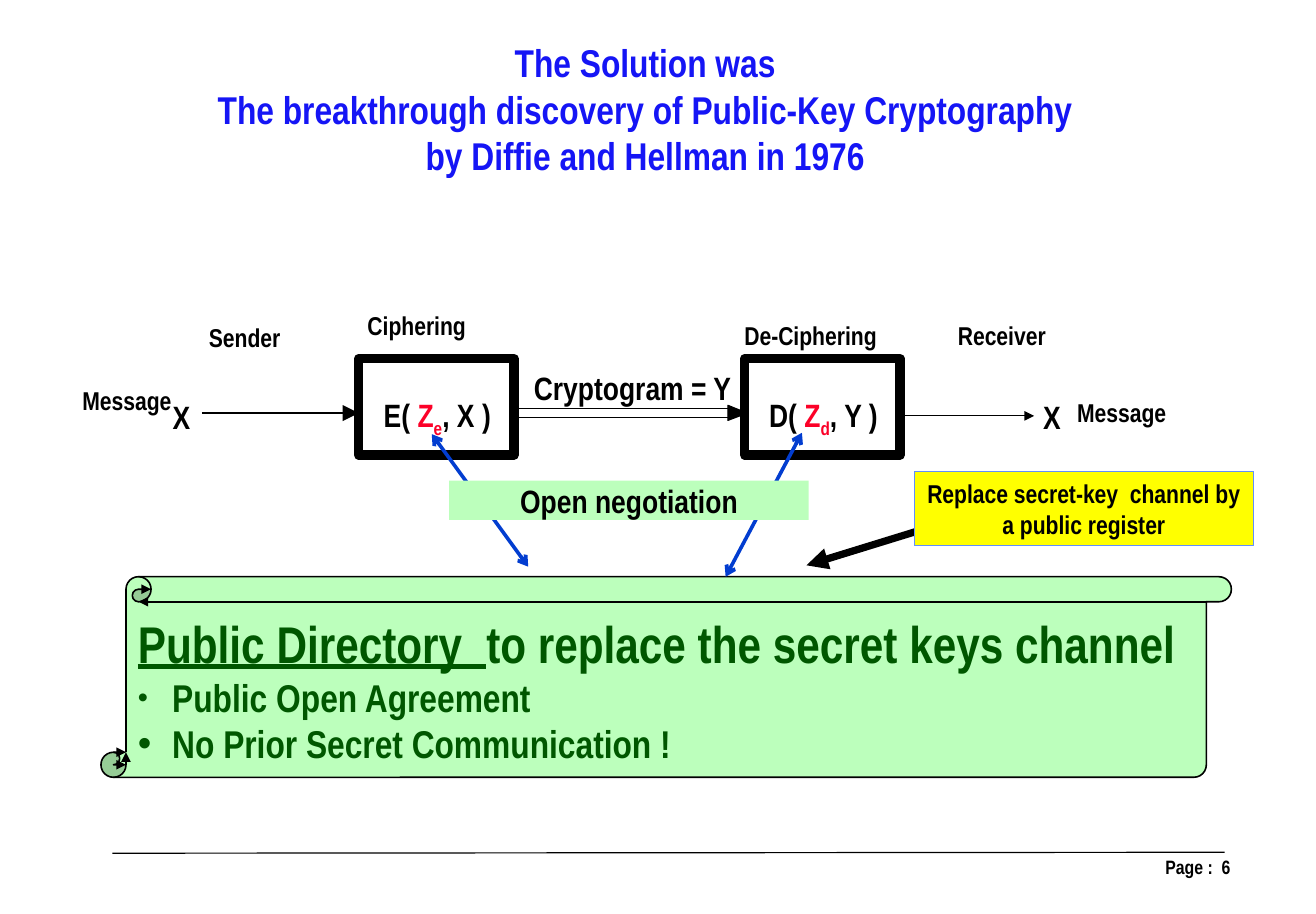
from lxml import etree
from pptx import Presentation
from pptx.dml.color import RGBColor
from pptx.enum.shapes import MSO_CONNECTOR, MSO_SHAPE
from pptx.enum.text import MSO_ANCHOR, PP_ALIGN
from pptx.oxml.ns import qn
from pptx.util import Cm, Pt

RECT = MSO_SHAPE.RECTANGLE
SCROLL = MSO_SHAPE.VERTICAL_SCROLL
STRAIGHT = MSO_CONNECTOR.STRAIGHT
LEFT, CENTER, RIGHT = PP_ALIGN.LEFT, PP_ALIGN.CENTER, PP_ALIGN.RIGHT
TOP, MIDDLE = MSO_ANCHOR.TOP, MSO_ANCHOR.MIDDLE

BLACK, BLUE, RED = "000000", "1515F5", "FC0128"
MINT, GREEN, YELLOW = "BCFFBC", "005700", "FFFF00"
SKY, ROYAL = "618FFD", "023DD0"


def rgb(value):
    return RGBColor.from_string(value)


class Slide:
    font = "Arial Narrow"

    def __init__(self, prs):
        self.shapes = prs.slides.add_slide(prs.slide_layouts[6]).shapes

    def paint(self, sp, fill=None, line=None, width=0.75):
        sp.shadow.inherit = False
        if fill:
            sp.fill.solid()
            sp.fill.fore_color.rgb = rgb(fill)
        else:
            sp.fill.background()
        if line:
            sp.line.color.rgb = rgb(line)
            sp.line.width = Pt(width)
        else:
            sp.line.fill.background()
        return sp

    def shape(self, kind, box, fill=None, line=None, width=0.75):
        sp = self.shapes.add_shape(kind, *map(Cm, box))
        return self.paint(sp, fill, line, width)

    def arrowhead(self, sp, end, kind, size="med"):
        ln = sp._element.spPr.find(qn("a:ln"))
        etree.SubElement(ln, qn(f"a:{end}End"), type=kind, w=size, len=size)

    def line(self, start, end, color=BLACK, width=0.75, head=None, tail=None, size="med"):
        cxn = self.shapes.add_connector(STRAIGHT, *map(Cm, start + end))
        cxn.line.color.rgb = rgb(color)
        cxn.line.width = Pt(width)
        if head:
            self.arrowhead(cxn, "head", head, size)
        if tail:
            self.arrowhead(cxn, "tail", tail, size)
        etree.SubElement(cxn._element.spPr, qn("a:effectLst"))

    def polygon(self, points, fill):
        points = [(Cm(x), Cm(y)) for x, y in points]
        builder = self.shapes.build_freeform(*points[0])
        builder.add_line_segments(points[1:], close=True)
        self.paint(builder.convert_to_shape(), fill, fill)

    def bullet(self, p, percent):
        pPr = p._p.get_or_add_pPr()
        pPr.set("marL", str(Cm(0.75)))
        pPr.set("indent", str(Cm(-0.75)))
        etree.SubElement(pPr, qn("a:buSzPct"), val=str(percent * 1000))
        etree.SubElement(pPr, qn("a:buFont"), typeface="Arial")
        etree.SubElement(pPr, qn("a:buChar"), char="•")

    def run(self, p, text, size, color=BLACK, underline=False, baseline=0):
        r = p.add_run()
        r.text = text
        r.font.name = self.font
        r.font.size = Pt(size)
        r.font.bold = True
        r.font.underline = underline
        r.font.color.rgb = rgb(color)
        if baseline:
            r._r.get_or_add_rPr().set("baseline", str(baseline * 1000))

    def fill_text(self, sp, paragraphs, align=CENTER, anchor=TOP, inset=(0, 0), wrap=False):
        tf = sp.text_frame
        tf.word_wrap = wrap
        tf.vertical_anchor = anchor
        tf.margin_left = tf.margin_right = Cm(inset[0])
        tf.margin_top = tf.margin_bottom = Cm(inset[1])
        for i, runs in enumerate(paragraphs):
            p = tf.add_paragraph() if i else tf.paragraphs[0]
            p.alignment = align
            for args in runs:
                self.run(p, *args)
        return tf

    def text(self, box, paragraphs, **style):
        return self.fill_text(self.shapes.add_textbox(*map(Cm, box)), paragraphs, **style)


def main():
    prs = Presentation()
    prs.slide_width, prs.slide_height = Cm(28.8), Cm(20)
    s = Slide(prs)

    s.text((20.68, 18.57, 6.55, 0.8), [[("Page :  6", 12)]],
           align=RIGHT, inset=(0.3, 0.15), wrap=True)
    s.line((2.46, 18.67), (26.8, 18.65))

    title = ("The Solution was",
             "The breakthrough discovery of Public-Key Cryptography",
             "by Diffie and Hellman in 1976")
    s.text((4.67, 0.86, 18.9, 3.07), [[(t, 24, BLUE)] for t in title])

    labels = (
        ("Sender", 16, 4.57, 7.04, 1.57),
        ("Ciphering", 16, 8.03, 6.78, 2.18),
        ("De-Ciphering", 16, 16.28, 6.99, 2.92),
        ("Receiver", 16, 20.96, 6.99, 1.93),
        ("Message", 16, 1.8, 8.41, 1.96),
        ("Message", 16, 23.57, 8.69, 1.96),
        ("X", 20, 3.78, 8.69, 0.38),
        ("X", 20, 22.83, 8.69, 0.38),
        ("Cryptogram = Y", 20, 11.66, 8.05, 4.37),
    )
    for label, size, x, y, w in labels:
        s.text((x, y, w, 0.69 if size == 16 else 0.86), [[(label, size)]])

    s.line((4.42, 9.04), (7.85, 9.04), tail="triangle", size="lg")
    for y in (8.94, 9.14):
        s.line((11.23, y), (15.93, y))
    s.polygon([(15.93, 8.87), (16.35, 9.04), (15.93, 9.2)], BLACK)
    s.line((19.69, 9.1), (22.63, 9.1), tail="triangle")

    ciphers = ((7.85, "E( ", "e", ", X )"), (16.3, "D( ", "d", ", Y )"))
    for x, opening, key, closing in ciphers:
        s.shape(RECT, (x, 7.85, 3.4, 2.11), line=BLACK, width=5.75)
        s.text((x + 0.52, 8.64, 2.4, 0.86),
               [[(opening, 20), ("Z", 20, RED), (key, 20, RED, False, -25), (closing, 20)]])

    scroll = s.shape(SCROLL, (2.21, 12.62, 24.74, 4.39), MINT, BLACK, 1)
    s.arrowhead(scroll, "tail", "triangle")
    tf = s.text((3.02, 13.39, 23.93, 3.43),
                [[("Public Directory  ", 32, GREEN, True),
                  ("to replace the secret keys channel", 32, GREEN)],
                 [("Public Open Agreement", 24, GREEN)],
                 [("No Prior Secret Communication !", 24, GREEN)]],
                align=LEFT, wrap=True)
    for p, percent in zip(tf.paragraphs[1:], (75, 100)):
        s.bullet(p, percent)

    s.line((17.65, 12.37), (21.67, 11.13), width=4.5, head="triangle")
    note = s.shape(RECT, (20.01, 10.31, 7.42, 1.63), YELLOW, SKY)
    s.fill_text(note, [[("Replace secret-key  channel by", 16)], [("a public register", 16)]],
                anchor=MIDDLE, inset=(0.25, 0.13))

    for start, end in (((9.45, 9.5), (11.56, 12.4)), ((17.55, 9.47), (15.88, 12.62))):
        s.line(start, end, ROYAL, 2.25, head="arrow", tail="arrow")
    negotiation = s.shape(RECT, (9.83, 10.52, 7.87, 0.86), MINT)
    s.fill_text(negotiation, [[("Open negotiation", 20)]], anchor=MIDDLE, wrap=True)

    prs.save("out.pptx")


if __name__ == "__main__":
    main()
